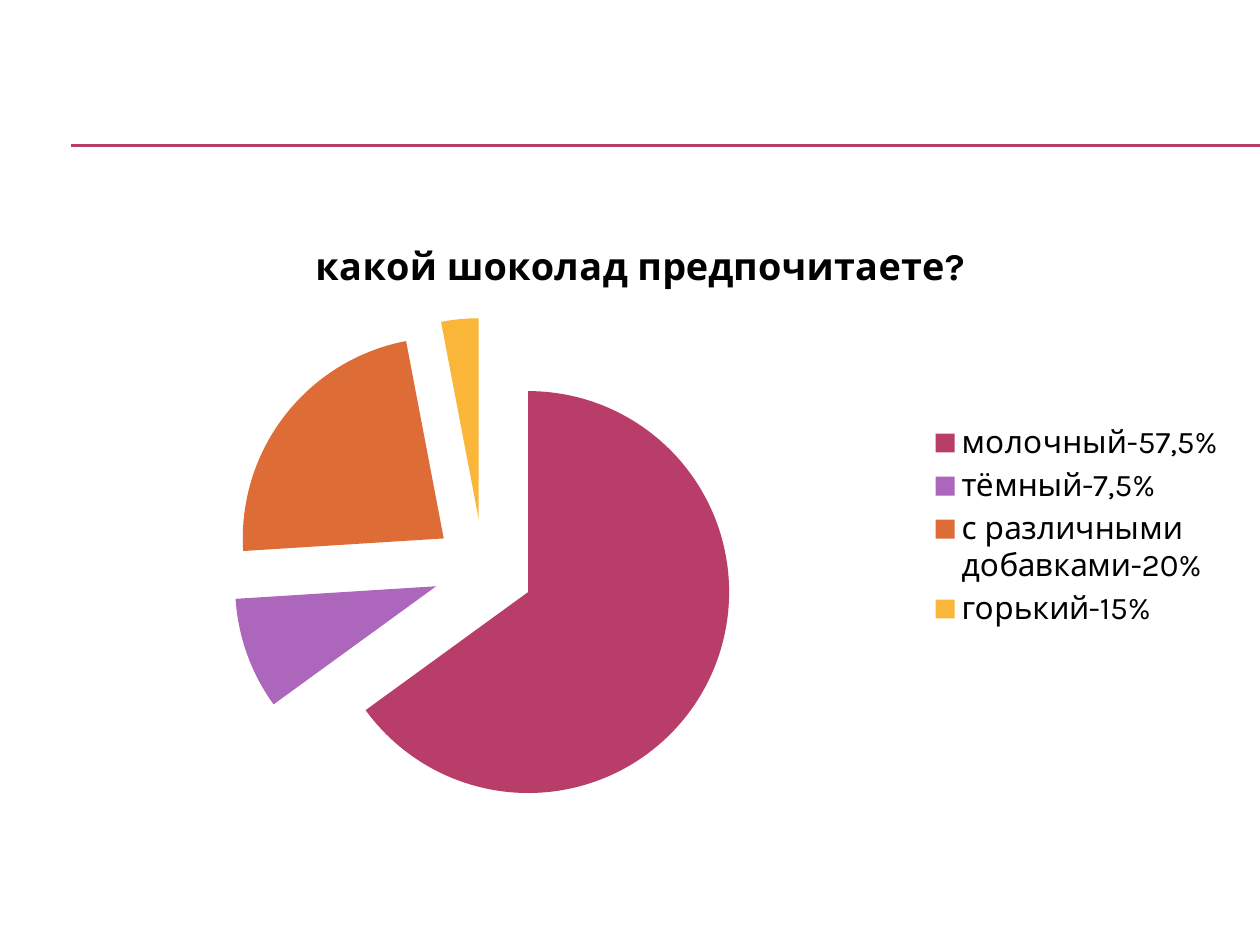
import pptx
import pptx.chart.data
import pptx.dml.color
import pptx.enum.chart
import pptx.enum.shapes
import pptx.oxml
import pptx.oxml.ns
import pptx.util

deck = pptx.Presentation()
deck.slide_width = pptx.util.Inches(10)
deck.slide_height = pptx.util.Inches(7.5)
wide, high = deck.slide_width, deck.slide_height
slide = deck.slides.add_slide(deck.slide_layouts[6])


def paint(target, code):
    target.solid()
    target.fore_color.rgb = pptx.dml.color.RGBColor.from_string(code)


def style(font, size=18, bold=False, color="000000"):
    font.name = "Karla"
    font.size = pptx.util.Pt(size)
    font.bold = bold
    paint(font.fill, color)


# Double rule under the header area
for y in (1.15, 1.16):
    top = int(high * y / 7.5)
    rule = slide.shapes.add_connector(
        pptx.enum.shapes.MSO_CONNECTOR.STRAIGHT, int(wide * 0.056), top, wide, top)
    paint(rule.line.fill, "B83D68")
    rule.line.width = pptx.util.Pt(0.75)
    rule._element.spPr.append(pptx.oxml.parse_xml(
        "<a:effectLst %s/>" % pptx.oxml.ns.nsdecls("a")))

# Chart data: label, value, slice colour
head = "какой шоколад предпочитаете?"
parts = [
    ("молочный-57,5%", 65, "B83D68"),
    ("тёмный-7,5%", 9, "AC66BB"),
    ("с различными добавками-20%", 23, "DE6C36"),
    ("горький-15%", 3, "F9B639"),
]
data = pptx.chart.data.CategoryChartData()
data.categories = [name for name, share, color in parts]
data.add_series(head, [share for name, share, color in parts])

# Pie chart
chart = slide.shapes.add_chart(
    pptx.enum.chart.XL_CHART_TYPE.PIE, int(wide * 0.033), int(high * 1.7 / 7.5),
    int(wide * 0.95), int(high * 0.66), data).chart
style(chart.font)
chart.has_title = True
title = chart.chart_title.text_frame
title.text = head
style(title.paragraphs[0].runs[0].font, size=21.6, bold=True)

# Legend
chart.has_legend = True
chart.legend.position = pptx.enum.chart.XL_LEGEND_POSITION.RIGHT
chart.legend.include_in_layout = False
style(chart.legend.font)

# Slices, pulled apart
plot = chart.plots[0]
plot.vary_by_categories = True
pie = plot.series[0]
burst = pptx.oxml.parse_xml(
    '<c:explosion %s val="25"/>' % pptx.oxml.ns.nsdecls("c"))
pie._element.find(pptx.oxml.ns.qn("c:tx")).addnext(burst)
for i, (name, share, color) in enumerate(parts):
    paint(pie.points[i].format.fill, color)

deck.save("out.pptx")
